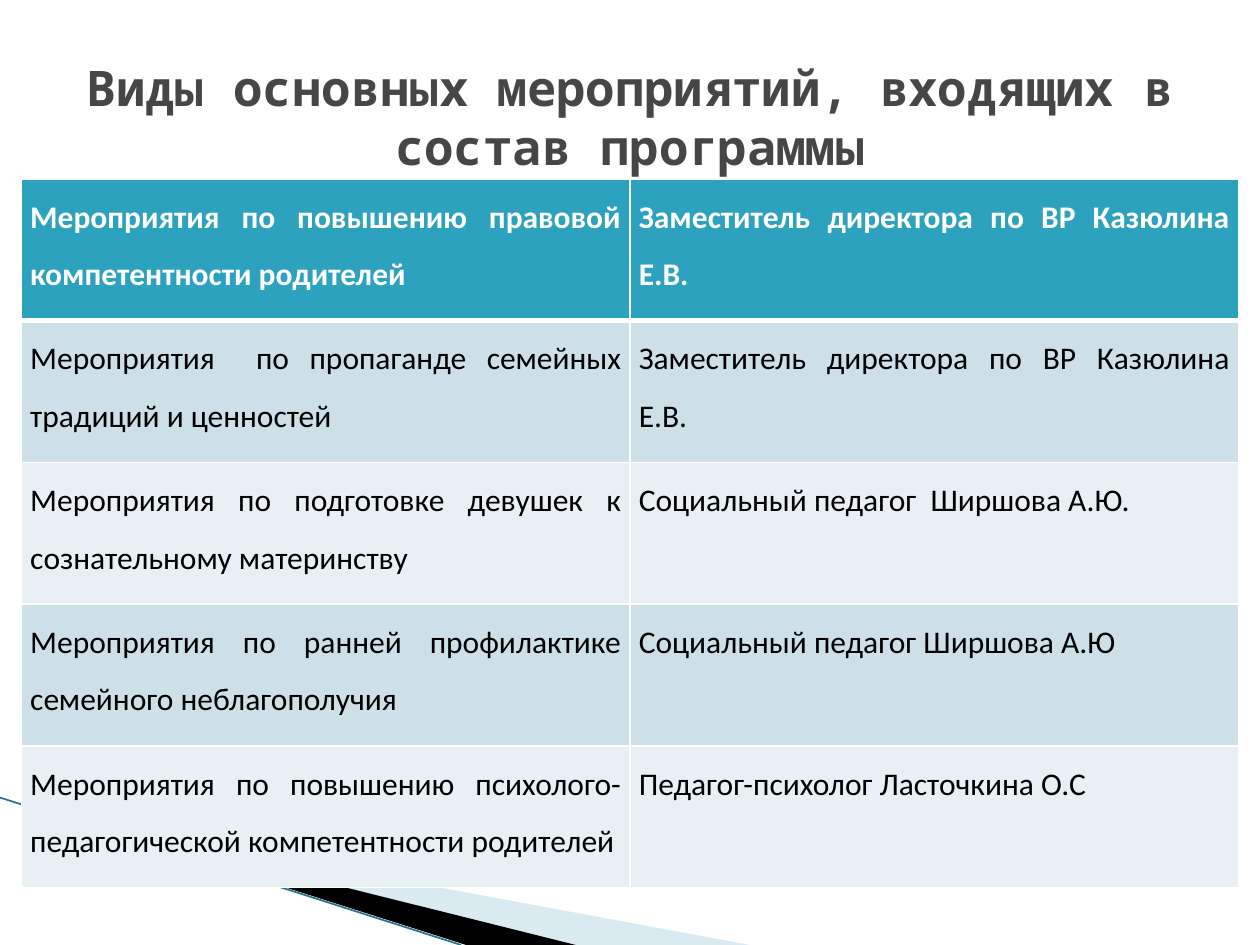
from lxml.etree import SubElement
from pptx import Presentation
from pptx.dml.color import RGBColor
from pptx.enum.shapes import MSO_CONNECTOR
from pptx.enum.text import MSO_ANCHOR, PP_ALIGN
from pptx.oxml.ns import qn
from pptx.util import Inches, Pt

SLIDE_WIDTH, SLIDE_HEIGHT = 10, 7.5
TABLE_LEFT, TABLE_TOP = 0.17, 1.42
COLUMN_WIDTH, ROW_HEIGHT = 4.83, 1.125
HEADER_FILL, BAND_FILLS = "2DA2BF", ("CDE0E8", "E8F0F4")
TITLE = "Виды основных мероприятий, входящих в состав программы"
ACTIVITIES = [
    ("Мероприятия по повышению правовой компетентности родителей",
     "Заместитель директора по ВР Казюлина Е.В."),
    ("Мероприятия  по пропаганде семейных традиций и ценностей",
     "Заместитель директора по ВР Казюлина Е.В."),
    ("Мероприятия по подготовке девушек к сознательному материнству",
     "Социальный педагог  Ширшова А.Ю."),
    ("Мероприятия по ранней профилактике семейного неблагополучия",
     "Социальный педагог Ширшова А.Ю"),
    ("Мероприятия по повышению психолого-педагогической компетентности родителей",
     "Педагог-психолог Ласточкина О.С"),
]


def color(value):
    """Turn a hex string into a colour."""
    return RGBColor.from_string(value)


def style_font(font, name, size, value, bold):
    """Set the face, size, colour and weight of a font."""
    font.name, font.size, font.bold = name, Pt(size), bold
    font.color.rgb = color(value)


def add_wedge(slide, points, fill, opacity=100):
    """Draw a filled outline through points given in inches."""
    corners = [(Inches(x), Inches(y)) for x, y in points]
    builder = slide.shapes.build_freeform(*corners[0])
    builder.add_line_segments(corners[1:], close=True)
    shape = builder.convert_to_shape()
    shape.shadow.inherit = False
    shape.line.fill.background()
    shape.fill.solid()
    shape.fill.fore_color.rgb = color(fill)
    if opacity < 100:
        fill_color = shape._element.spPr.find(".//" + qn("a:srgbClr"))
        SubElement(fill_color, qn("a:alpha"), val=str(opacity * 1000))


def add_line(slide, start, end, value, width):
    """Draw a straight line without a shadow."""
    line = slide.shapes.add_connector(
        MSO_CONNECTOR.STRAIGHT, *(Inches(length) for length in start + end))
    line.line.color.rgb = color(value)
    line.line.width = Pt(width)
    SubElement(line._element.spPr, qn("a:effectLst"))


def add_borders(cell, top, bottom):
    """Give a cell white borders with widths in points."""
    properties = cell._tc.get_or_add_tcPr()
    for side, width in (("L", 1), ("R", 1), ("T", top), ("B", bottom)):
        border = SubElement(properties, qn(f"a:ln{side}"), w=str(Pt(width)))
        SubElement(SubElement(border, qn("a:solidFill")), qn("a:srgbClr"), val="FFFFFF")


def fill_cell(cell, text, row):
    """Write and format one cell according to its row."""
    is_header = row == 0
    cell.text = text
    cell.margin_left = cell.margin_right = Inches(0.07)
    cell.margin_top = cell.margin_bottom = 0
    add_borders(cell, 3 if row == 1 else 1, 3 if is_header else 1)
    cell.fill.solid()
    cell.fill.fore_color.rgb = color(HEADER_FILL if is_header else BAND_FILLS[(row - 1) % 2])
    paragraph = cell.text_frame.paragraphs[0]
    paragraph.alignment, paragraph.line_spacing = PP_ALIGN.JUSTIFY, 1.5
    style_font(paragraph.font, "Calibri", 18, "FFFFFF" if is_header else "000000", is_header)


def add_activity_table(slide):
    """Add the table of activities and the people responsible."""
    rows, columns = len(ACTIVITIES), len(ACTIVITIES[0])
    table = slide.shapes.add_table(
        rows, columns, Inches(TABLE_LEFT), Inches(TABLE_TOP),
        Inches(columns * COLUMN_WIDTH), Inches(rows * ROW_HEIGHT)).table
    for row, texts in enumerate(ACTIVITIES):
        for column, text in enumerate(texts):
            fill_cell(table.cell(row, column), text, row)


def place_title(slide):
    """Fill the title placeholder and bring it to the front."""
    title = slide.shapes.title
    title.left, title.top = Inches(0.05 * SLIDE_WIDTH), Inches(0.04 * SLIDE_HEIGHT)
    title.width, title.height = Inches(0.9 * SLIDE_WIDTH), Inches(SLIDE_HEIGHT / 6)
    title.text_frame.text = TITLE
    title.text_frame.vertical_anchor = MSO_ANCHOR.MIDDLE
    paragraph = title.text_frame.paragraphs[0]
    paragraph.alignment = PP_ALIGN.CENTER
    style_font(paragraph.font, "Noto Sans Mono", 28, "464646", True)
    title._element.getparent().append(title._element)


def main():
    """Build and save the slide."""
    presentation = Presentation()
    presentation.slide_width = Inches(SLIDE_WIDTH)
    presentation.slide_height = Inches(SLIDE_HEIGHT)
    slide = presentation.slides.add_slide(presentation.slide_layouts[5])
    add_wedge(slide, [(0.55, 6.5), (5.95, SLIDE_HEIGHT), (4.56, SLIDE_HEIGHT)], "A0CBDC", 40)
    add_wedge(slide, [(0.53, 6.49), (4.57, SLIDE_HEIGHT), (3.7, SLIDE_HEIGHT)], "000000")
    add_line(slide, (0, 6.33), (3.66, SLIDE_HEIGHT), "1F768B", 0.95)
    add_activity_table(slide)
    place_title(slide)
    presentation.save("out.pptx")


if __name__ == "__main__":
    main()
